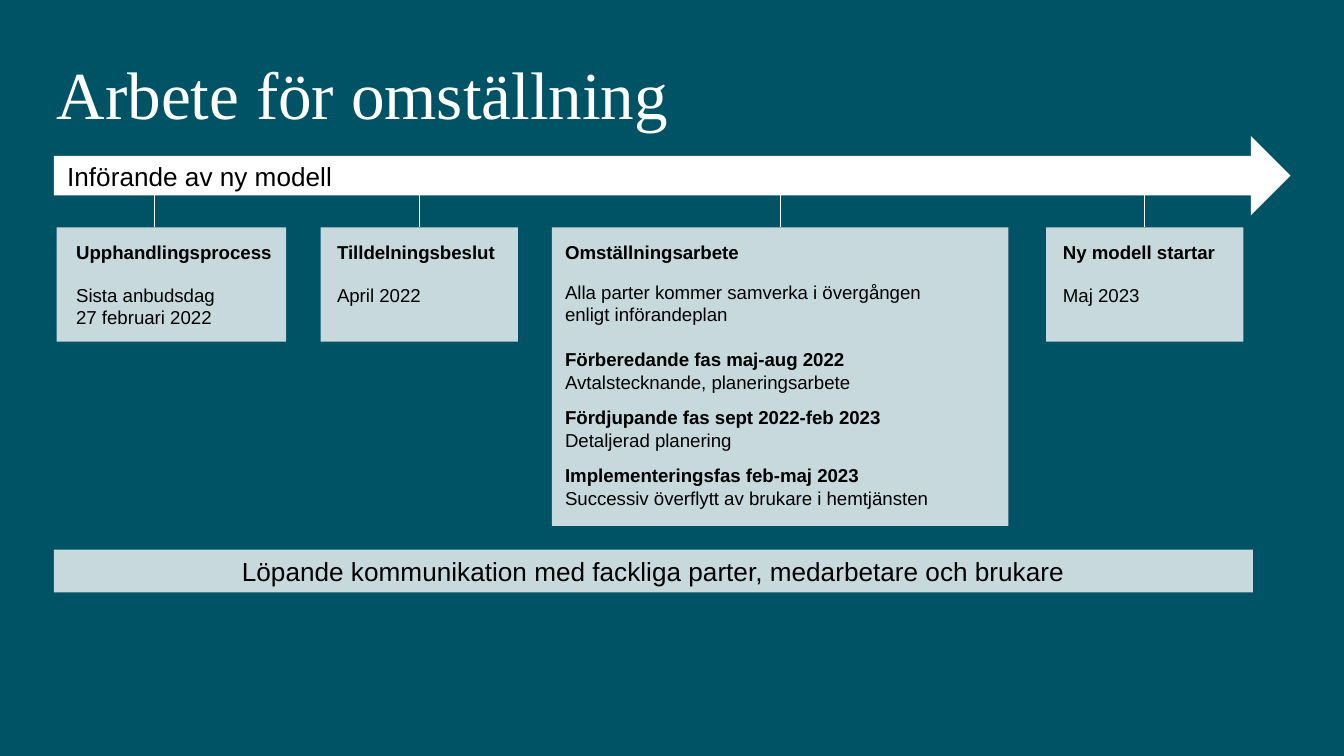
from dataclasses import dataclass
from typing import NamedTuple, Optional

from lxml import etree
from pptx import Presentation
from pptx.dml.color import RGBColor
from pptx.enum.shapes import MSO_CONNECTOR, MSO_SHAPE
from pptx.enum.text import MSO_ANCHOR, MSO_AUTO_SIZE, PP_ALIGN
from pptx.oxml.ns import qn
from pptx.util import Cm, Pt

LEFT, CENTER = PP_ALIGN.LEFT, PP_ALIGN.CENTER
TOP, MIDDLE, BOTTOM = MSO_ANCHOR.TOP, MSO_ANCHOR.MIDDLE, MSO_ANCHOR.BOTTOM
RECTANGLE, RIGHT_ARROW = MSO_SHAPE.RECTANGLE, MSO_SHAPE.RIGHT_ARROW
STRAIGHT = MSO_CONNECTOR.STRAIGHT
GROW_WITH_TEXT = MSO_AUTO_SIZE.SHAPE_TO_FIT_TEXT
TOP_SITE = 0


@dataclass(frozen=True)
class Theme:
    background: RGBColor = RGBColor(0x00, 0x53, 0x65)
    white: RGBColor = RGBColor(0xFF, 0xFF, 0xFF)
    black: RGBColor = RGBColor(0x00, 0x00, 0x00)
    panel_opacity: int = 78
    title_font: str = "Times New Roman"
    body_font: str = "Arial"
    title_size: int = 36
    band_size: int = 14
    card_size: int = 10
    line_width: float = 0.75


THEME = Theme()


class Box(NamedTuple):
    """A frame in centimetres."""
    left: float
    top: float
    width: float
    height: float


class Line(NamedTuple):
    text: str
    bold: bool = False
    space_before: float = 0


@dataclass(frozen=True)
class Card:
    panel: Box
    text: Box
    lines: tuple[Line, ...]
    stem_x: Optional[float] = None  # None: the stem joins the middle of the panel


CARD_TOP = 4.3
CARD_HEIGHT = 2.16
STEM_TOP = 3.63
INSET = 0.25

CARDS = (
    Card(
        Box(1.07, CARD_TOP, 4.34, CARD_HEIGHT), Box(1.19, CARD_TOP, 4.34, 2.62),
        (
            Line("Upphandlingsprocess", True),
            Line("Sista anbudsdag", space_before=11),
            Line("27 februari 2022"),
        ),
        stem_x=2.92,
    ),
    Card(
        Box(6.06, CARD_TOP, 3.73, CARD_HEIGHT), Box(6.12, CARD_TOP, 3.61, 2.18),
        (Line("Tilldelningsbeslut", True), Line("April 2022", space_before=11)),
    ),
    Card(
        Box(10.43, CARD_TOP, 8.63, 5.64), Box(10.43, CARD_TOP, 8.08, 5.64),
        (
            Line("Omställningsarbete", True),
            Line("Alla parter kommer samverka i övergången enligt införandeplan", space_before=9.5),
            Line("Förberedande fas maj-aug 2022", True, 12),
            Line("Avtalstecknande, planeringsarbete"),
            Line("Fördjupande fas sept 2022-feb 2023", True, 7),
            Line("Detaljerad planering"),
            Line("Implementeringsfas feb-maj 2023", True, 7),
            Line("Successiv överflytt av brukare i hemtjänsten"),
        ),
    ),
    Card(
        Box(19.77, CARD_TOP, 3.73, CARD_HEIGHT), Box(19.84, CARD_TOP, 3.61, 2.18),
        (Line("Ny modell startar", True), Line("Maj 2023", space_before=11)),
    ),
)


def lengths(box: Box) -> list[Cm]:
    return [Cm(value) for value in box]


def set_frame(frame, anchor, inset: float = INSET, bottom: float = INSET) -> None:
    frame.word_wrap = True
    frame.vertical_anchor = anchor
    frame.margin_left = frame.margin_top = frame.margin_right = Cm(inset)
    frame.margin_bottom = Cm(bottom)


def write_lines(frame, lines: tuple[Line, ...], size: int, font: str = THEME.body_font,
                color: RGBColor = THEME.black, align=LEFT) -> None:
    for index, line in enumerate(lines):
        paragraph = frame.add_paragraph() if index else frame.paragraphs[0]
        paragraph.alignment = align
        if line.space_before:
            paragraph.space_before = Pt(line.space_before)
        run = paragraph.add_run()
        run.text = line.text
        run.font.name = font
        run.font.size = Pt(size)
        run.font.bold = line.bold
        run.font.color.rgb = color


def add_white_shape(slide, kind, box: Box, opacity: int = 100):
    shape = slide.shapes.add_shape(kind, *lengths(box))
    shape.shadow.inherit = False
    shape.fill.solid()
    shape.fill.fore_color.rgb = THEME.white
    shape.line.fill.background()
    if opacity < 100:
        color = shape.fill._xPr.find(f".//{qn('a:srgbClr')}")
        etree.SubElement(color, qn("a:alpha"), val=str(opacity * 1000))
    return shape


def add_band(slide, kind, box: Box, text: str, align, opacity: int = 100) -> None:
    shape = add_white_shape(slide, kind, box, opacity)
    set_frame(shape.text_frame, MIDDLE)
    write_lines(shape.text_frame, (Line(text),), THEME.band_size, align=align)


def add_title(slide, box: Box, text: str) -> None:
    frame = slide.shapes.add_textbox(*lengths(box)).text_frame
    set_frame(frame, BOTTOM, inset=0, bottom=0.1)
    write_lines(frame, (Line(text),), THEME.title_size, THEME.title_font, THEME.white)
    frame.paragraphs[0].line_spacing = 0.9


def add_stem(slide, card: Card, panel) -> None:
    """Link a card to the arrow above it."""
    joined = card.stem_x is None
    x = panel.left + panel.width // 2 if joined else Cm(card.stem_x)
    stem = slide.shapes.add_connector(STRAIGHT, x, panel.top, x, Cm(STEM_TOP))
    if joined:
        stem.begin_connect(panel, TOP_SITE)
    stem.line.color.rgb = THEME.white
    stem.line.width = Pt(THEME.line_width)
    etree.SubElement(stem._element.spPr, qn("a:effectLst"))


def add_card(slide, card: Card) -> None:
    panel = add_white_shape(slide, RECTANGLE, card.panel, THEME.panel_opacity)
    add_stem(slide, card, panel)
    frame = slide.shapes.add_textbox(*lengths(card.text)).text_frame
    set_frame(frame, TOP)
    frame.auto_size = GROW_WITH_TEXT
    write_lines(frame, card.lines, THEME.card_size)


def main() -> None:
    presentation = Presentation()
    presentation.slide_width = Cm(25.4)
    presentation.slide_height = Cm(14.29)
    slide = presentation.slides.add_slide(presentation.slide_layouts[6])
    slide.background.fill.solid()
    slide.background.fill.fore_color.rgb = THEME.background

    add_title(slide, Box(1.07, 1.04, 21, 1.6), "Arbete för omställning")
    add_band(slide, RIGHT_ARROW, Box(1.02, 2.57, 23.37, 1.5), "Införande av ny modell", LEFT)
    for card in CARDS:
        add_card(slide, card)
    add_band(slide, RECTANGLE, Box(1.02, 10.39, 22.66, 0.81),
             "Löpande kommunikation med fackliga parter, medarbetare och brukare",
             CENTER, THEME.panel_opacity)
    presentation.save("out.pptx")


if __name__ == "__main__":
    main()
